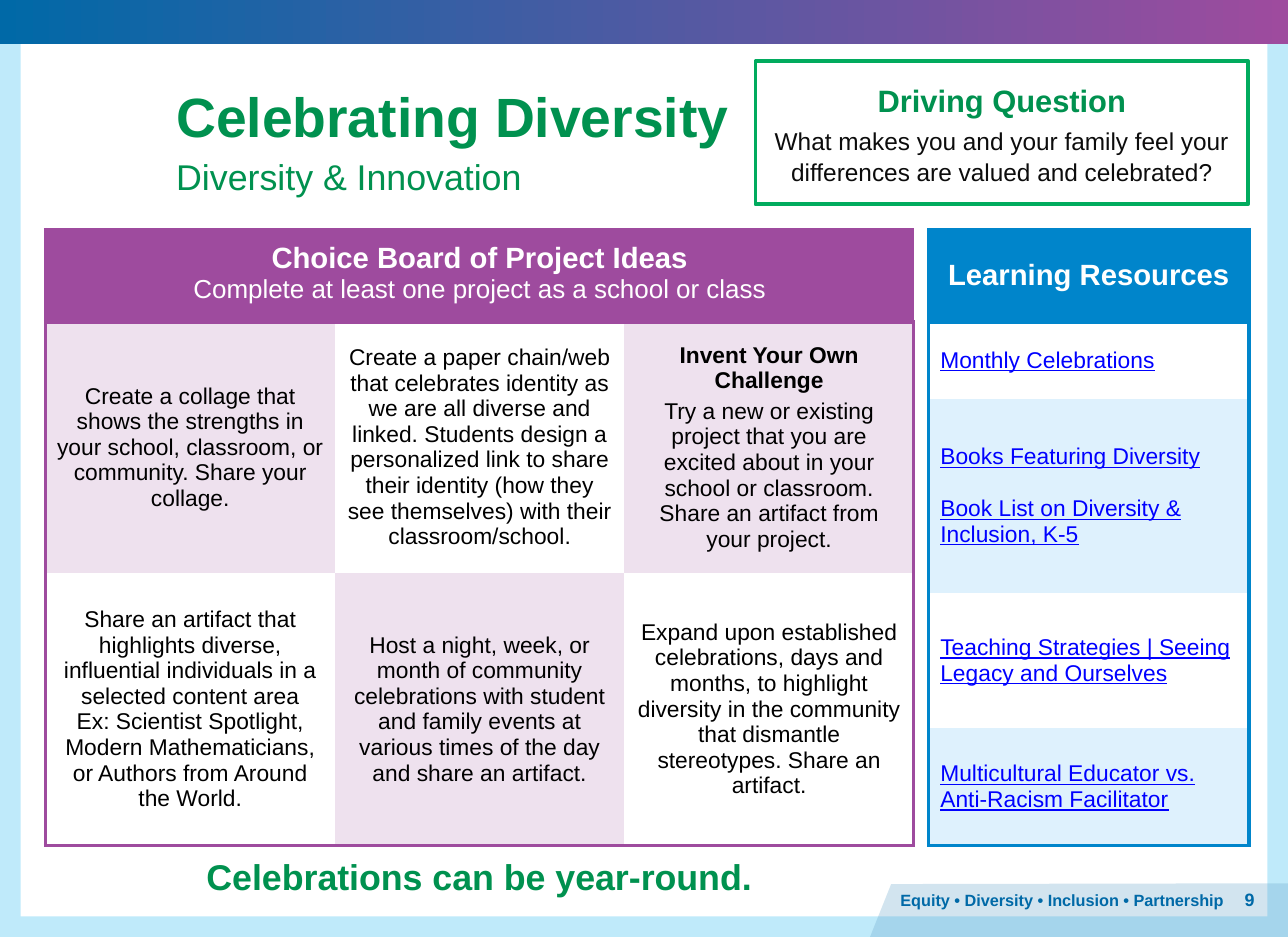
from dataclasses import dataclass
from pptx import Presentation
from pptx.dml.color import RGBColor
from pptx.enum.shapes import MSO_SHAPE
from pptx.enum.text import MSO_ANCHOR, PP_ALIGN
from pptx.oxml.ns import qn
from pptx.util import Pt
from lxml.etree import SubElement


@dataclass(frozen=True)
class Theme:
    font: str = "Arial"
    green: str = "00914F"
    edge: str = "01AB5E"
    purple: str = "9E4B9E"
    lilac: str = "EEE1EE"
    blue: str = "0085CB"
    pale: str = "DEF1FD"
    navy: str = "0069A7"
    sky: str = "00ADEE"
    tab: str = "66A5CA"
    link: str = "0000FF"
    ink: str = "0C0C0C"
    black: str = "000000"
    white: str = "FFFFFF"
    title: float = 34
    large: float = 22
    ask: float = 19
    head: float = 18
    sub: float = 16
    query: float = 15
    body: float = 14
    page: float = 11
    foot: float = 10
    line: float = 2.25


T = Theme()
LEFT, MID, RIGHT = PP_ALIGN.LEFT, PP_ALIGN.CENTER, PP_ALIGN.RIGHT


@dataclass(frozen=True)
class Para:
    text: str
    size: float
    color: str
    bold: bool = False
    under: bool = False
    before: float = 0


def rgb(code):
    return RGBColor.from_string(code)


def write(frame, paras, align, space=1):
    for i, item in enumerate(paras):
        para = frame.add_paragraph() if i else frame.paragraphs[0]
        para.alignment = align
        para.line_spacing = space
        para.space_before = Pt(item.before)
        run = para.add_run()
        run.text = item.text
        font = run.font
        font.name, font.size = T.font, Pt(item.size)
        font.bold, font.underline = item.bold, item.under
        font.color.rgb = rgb(item.color)


def pad(frame, side, end):
    frame.margin_left = frame.margin_right = Pt(side)
    frame.margin_top = frame.margin_bottom = Pt(end)
    frame.word_wrap = True


def add_text(slide, box, paras, align=LEFT, anchor=MSO_ANCHOR.TOP,
             side=7.2, end=7.2, space=1.07):
    frame = slide.shapes.add_textbox(*map(Pt, box)).text_frame
    pad(frame, side, end)
    frame.vertical_anchor = anchor
    write(frame, paras, align, space)


def add_plain(slide, kind, box):
    shape = slide.shapes.add_shape(kind, *map(Pt, box))
    shape.shadow.inherit = False
    shape.line.fill.background()
    return shape


def tint(shape, color, alpha):
    """Fill a shape with a colour of the given percent opacity."""
    shape.fill.solid()
    shape.fill.fore_color.rgb = rgb(color)
    node = shape.fill._xPr.find(".//" + qn("a:srgbClr"))
    SubElement(node, qn("a:alpha"), val=str(alpha * 1000))


def add_edge(cell, side, color):
    """Draw one side of a cell, or hide it when color is None."""
    props = cell._tc.get_or_add_tcPr()
    edge = SubElement(props, qn("a:ln" + side), w=str(Pt(T.line)))
    if color:
        fill = SubElement(edge, qn("a:solidFill"))
        SubElement(fill, qn("a:srgbClr"), val=color)
    else:
        SubElement(edge, qn("a:noFill"))


def fill_cell(cell, paras, fill, align, anchor, side, end):
    pad(cell.text_frame, side, end)
    for name in ("left", "right"):
        setattr(cell, "margin_" + name, Pt(side))
    for name in ("top", "bottom"):
        setattr(cell, "margin_" + name, Pt(end))
    cell.vertical_anchor = anchor
    if fill:
        cell.fill.solid()
        cell.fill.fore_color.rgb = rgb(fill)
    else:
        cell.fill.background()
    write(cell.text_frame, paras, align)


def add_grid(slide, spot, widths, heights, color):
    """Add an empty table with a coloured frame around its head and body."""
    grid = slide.shapes.add_table(
        len(heights), len(widths), *map(Pt, spot),
        Pt(sum(widths)), Pt(sum(heights))).table
    grid.first_row = grid.horz_banding = False
    for col, width in zip(grid.columns, widths):
        col.width = Pt(width)
    for row, height in zip(grid.rows, heights):
        row.height = Pt(height)
    last, end = len(heights) - 1, len(widths) - 1
    for r in range(last + 1):
        for c in range(end + 1):
            sides = {"L": c == 0, "R": c == end,
                     "T": r < 2, "B": r in (0, last)}
            for side, drawn in sides.items():
                add_edge(grid.cell(r, c), side, color if drawn else None)
    return grid


def add_board(slide):
    def body(*texts):
        return [Para(text, T.body, T.black) for text in texts]

    ideas = [
        [body("Create a collage that shows the strengths in your school, classroom, or community. Share your collage."),
         body("Create a paper chain/web that celebrates identity as we are all diverse and linked. Students design a "
              "personalized link to share their identity (how they see themselves) with their classroom/school."),
         [Para("Invent Your Own Challenge", T.body, T.black, True),
          Para("Try a new or existing project that you are excited about in your school or classroom. "
               "Share an artifact from your project.", T.body, T.black, before=3)]],
        [body("Share an artifact that highlights diverse, influential individuals in a selected content area",
              "Ex: Scientist Spotlight,",
              "Modern Mathematicians, or Authors from Around the World."),
         body("Host a night, week, or month of community celebrations with student and family events "
              "at various times of the day and share an artifact."),
         body("Expand upon established celebrations, days and months, to highlight diversity in the community "
              "that dismantle stereotypes. Share an artifact.")]]
    grid = add_grid(slide, (28, 141), [178] * 3, (57, 154, 168), T.purple)
    grid.cell(0, 0).merge(grid.cell(0, 2))
    head = [Para("Choice Board of Project Ideas", T.head, T.white, True),
            Para("Complete at least one project as a school or class", T.sub, T.white)]
    fill_cell(grid.cell(0, 0), head, T.purple, MID, MSO_ANCHOR.TOP, 6, 8)
    for r, row in enumerate(ideas):
        for c, paras in enumerate(row):
            fill = None if (r + c) % 2 else T.lilac
            fill_cell(grid.cell(r + 1, c), paras, fill, MID, MSO_ANCHOR.MIDDLE, 6, 8)


def add_links(slide):
    links = [["Monthly Celebrations"],
             ["Books Featuring Diversity", "Book List on Diversity & Inclusion, K-5"],
             ["Teaching Strategies | Seeing Legacy and Ourselves"],
             ["Multicultural Educator vs. Anti-Racism Facilitator"]]
    grid = add_grid(slide, (571, 141), [197], (57, 47, 119.5, 83, 72.5), T.blue)
    head = [Para("Learning Resources", T.head, T.white, True)]
    fill_cell(grid.cell(0, 0), head, T.blue, MID, MSO_ANCHOR.MIDDLE, 6, 8)
    for i, texts in enumerate(links):
        paras = [Para(text, T.body, T.link, under=True, before=16 if n else 0)
                 for n, text in enumerate(texts)]
        fill = T.pale if i % 2 else None
        fill_cell(grid.cell(i + 1, 0), paras, fill, LEFT, MSO_ANCHOR.MIDDLE, 7.2, 7.2)


def add_frame(slide):
    rim = add_plain(slide, MSO_SHAPE.FRAME, (0, 0, 792, 576))
    rim.adjustments[0] = 0.022
    tint(rim, T.sky, 25)
    band = add_plain(slide, MSO_SHAPE.RECTANGLE, (0, 0, 792, 26.8))
    band.fill.gradient()
    band.fill.gradient_angle = 0
    for stop, color in zip(band.fill.gradient_stops, (T.navy, T.purple)):
        stop.color.rgb = rgb(color)
    pen = slide.shapes.build_freeform(Pt(548), Pt(543.5))
    pen.add_line_segments([(Pt(x), Pt(y)) for x, y in ((792, 543), (792, 576), (535, 576))])
    flap = pen.convert_to_shape()
    flap.shadow.inherit = False
    flap.line.fill.background()
    tint(flap, T.tab, 29)
    add_text(slide, (744.5, 543, 34, 19.4), [Para("9", T.page, T.navy, True)],
             RIGHT, MSO_ANCHOR.MIDDLE, end=3.6, space=1)
    add_text(slide, (546, 543, 214, 19.4),
             [Para("Equity • Diversity • Inclusion • Partnership", T.foot, T.navy, True)],
             MID, side=0, end=3.6)


def add_query(slide):
    box = add_plain(slide, MSO_SHAPE.RECTANGLE, (464.5, 37.6, 303, 88))
    box.fill.background()
    box.line.color.rgb = rgb(T.edge)
    box.line.width = Pt(T.line)
    pad(box.text_frame, 7.2, 7.2)
    box.text_frame.vertical_anchor = MSO_ANCHOR.MIDDLE
    write(box.text_frame, [
        Para("Driving Question", T.ask, T.green, True),
        Para("What makes you and your family feel your differences are valued and celebrated?",
             T.query, T.ink, before=3)], MID, 1.07)


def main():
    deck = Presentation()
    deck.slide_width, deck.slide_height = Pt(792), Pt(576)
    slide = deck.slides.add_slide(deck.slide_layouts[6])
    add_frame(slide)
    add_text(slide, (101.3, 40.4, 355, 84),
             [Para("Celebrating Diversity", T.title, T.green, True),
              Para("Diversity & Innovation", T.large, T.green, before=2)])
    add_query(slide)
    add_text(slide, (28, 516.5, 533.5, 41),
             [Para("Celebrations can be year-round.", T.large, T.green, True)], MID)
    add_board(slide)
    add_links(slide)
    deck.save("out.pptx")


if __name__ == "__main__":
    main()
